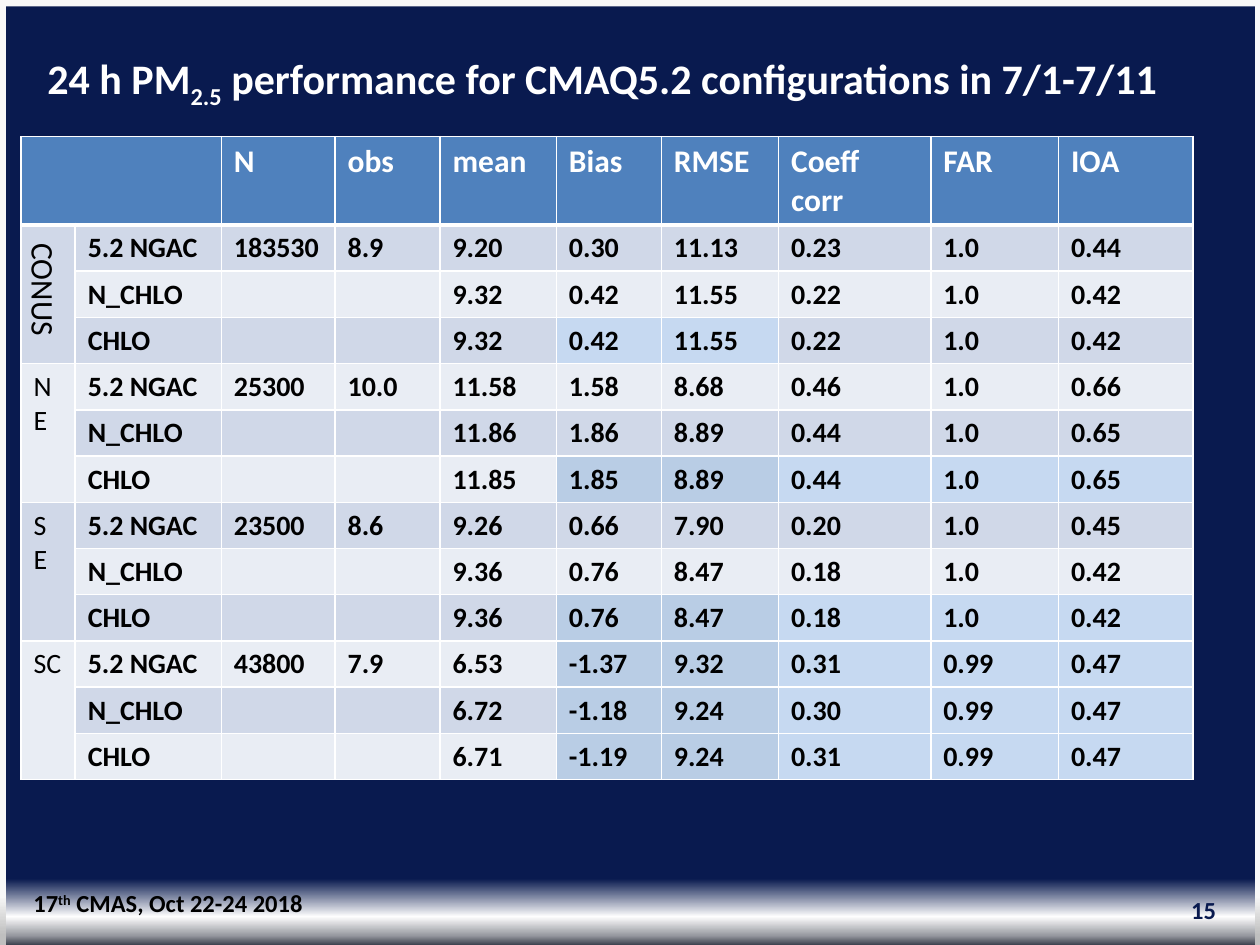
from dataclasses import dataclass
from lxml.etree import SubElement
from pptx import Presentation
from pptx.dml.color import RGBColor
from pptx.enum.shapes import MSO_SHAPE
from pptx.enum.text import MSO_ANCHOR, PP_ALIGN
from pptx.oxml.ns import qn
from pptx.util import Pt

TITLE = [("24 h PM", 0), ("2.5", -25),
         (" performance for CMAQ5.2 configurations in 7/1-7/11", 0)]
FOOTER = [("17", 0), ("th", 30), (" CMAS, Oct 22-24 2018", 0)]
PAGE = "15"
HEADERS = ["", "", "N", "obs", "mean", "Bias", "RMSE", "Coeff corr", "FAR", "IOA"]
CONFIGURATIONS = ["5.2 NGAC", "N_CHLO", "CHLO"]
# region label, N, obs, then one row of scores per configuration
REGIONS = [
    ("", "183530", "8.9", ["9.20 0.30 11.13 0.23 1.0 0.44",
                           "9.32 0.42 11.55 0.22 1.0 0.42",
                           "9.32 0.42 11.55 0.22 1.0 0.42"]),
    ("NE", "25300", "10.0", ["11.58 1.58 8.68 0.46 1.0 0.66",
                             "11.86 1.86 8.89 0.44 1.0 0.65",
                             "11.85 1.85 8.89 0.44 1.0 0.65"]),
    ("S\nE", "23500", "8.6", ["9.26 0.66 7.90 0.20 1.0 0.45",
                              "9.36 0.76 8.47 0.18 1.0 0.42",
                              "9.36 0.76 8.47 0.18 1.0 0.42"]),
    ("SC", "43800", "7.9", ["6.53 -1.37 9.32 0.31 0.99 0.47",
                            "6.72 -1.18 9.24 0.30 0.99 0.47",
                            "6.71 -1.19 9.24 0.31 0.99 0.47"]),
]
TALL_REGION = "CONUS"
COLUMN_WIDTHS = [31, 83.5, 65, 60, 66.5, 60, 67, 87, 73, 77]
HEADER_HEIGHT, ROW_HEIGHT = 50.5, 26.4
BIAS, COEFF = HEADERS.index("Bias"), HEADERS.index("Coeff corr")
FULLY_MARKED_ROWS = {6, 9, 10, 11, 12}
SHORT_MARKED_ROW = 3


@dataclass(frozen=True)
class Theme:
    font: str = "Calibri"
    navy: str = "091A4F"
    white: str = "FFFFFF"
    black: str = "000000"
    edge: str = "F8F8F8"
    header: str = "4F81BD"
    bands: tuple = ("E9EDF4", "D0D8E8")
    mark: str = "C6D9F1"
    strong_mark: str = "B9CDE5"
    page_stops: tuple = ((93, "091A4F"), (97, "FEFEFE"), (99, "9799A0"), (100, "3C414E"))
    edge_stops: tuple = ((0, "F8F8F8"), (95, "F5F5F5"), (99, "BFBFBF"))
    title_size: int = 24
    header_size: int = 18
    body_size: int = 16
    footer_size: int = 14


THEME = Theme()


def paint_gradient(fill, element, stops):
    """Fill from top to bottom with (percent, colour) stops."""
    fill.gradient()
    fill.gradient_angle = 270
    stop_list = next(element.iter(qn("a:gsLst")))
    for old in list(stop_list):
        stop_list.remove(old)
    for percent, colour in stops:
        stop = SubElement(stop_list, qn("a:gs"), pos=str(percent * 1000))
        SubElement(stop, qn("a:srgbClr"), val=colour)


def style(paragraph, size, colour, bold=True):
    font = paragraph.font
    font.name, font.size, font.bold = THEME.font, Pt(size), bold
    font.color.rgb = RGBColor.from_string(colour)


def add_edge(slide, left, top, width, height, stops=None):
    edge = slide.shapes.add_shape(MSO_SHAPE.RECTANGLE, Pt(left), Pt(top), Pt(width), Pt(height))
    edge.shadow.inherit = False
    edge.line.fill.background()
    if stops:
        paint_gradient(edge.fill, edge.element, stops)
    else:
        edge.fill.solid()
        edge.fill.fore_color.rgb = RGBColor.from_string(THEME.edge)


def add_text(slide, box, runs, size, colour, bold=True, wrap=False):
    """Write one line from (text, baseline percent) runs."""
    frame = slide.shapes.add_textbox(*map(Pt, box)).text_frame
    frame.word_wrap = wrap
    line = frame.paragraphs[0]
    style(line, size, colour, bold)
    for text, baseline in runs:
        run = line.add_run()
        run.text = text
        if baseline:
            run.font._element.set("baseline", str(baseline * 1000))
    return frame


def write_cell(cell, text, fill, size, colour, bold, bottom=1):
    cell.text = text
    for paragraph in cell.text_frame.paragraphs:
        style(paragraph, size, colour, bold)
        if not text:
            SubElement(paragraph._p, qn("a:endParaRPr"), sz=str(size * 100))
    properties = cell._tc.get_or_add_tcPr()
    for side in "LRTB":
        width = bottom if side == "B" else 1
        border = SubElement(properties, qn(f"a:ln{side}"), w=str(Pt(width)))
        SubElement(SubElement(border, qn("a:solidFill")), qn("a:srgbClr"), val=THEME.white)
    cell.fill.solid()
    cell.fill.fore_color.rgb = RGBColor.from_string(fill)


def body_fill(row, column):
    if row in FULLY_MARKED_ROWS and column >= BIAS:
        return THEME.strong_mark if column < COEFF else THEME.mark
    if row == SHORT_MARKED_ROW and BIAS <= column < COEFF:
        return THEME.mark
    return THEME.bands[row % 2]


def body_rows():
    for region, count, observed, scores in REGIONS:
        for i, (configuration, values) in enumerate(zip(CONFIGURATIONS, scores)):
            lead = [region, configuration, count, observed] if i == 0 else ["", configuration, "", ""]
            yield lead + values.split()


def add_scores(slide):
    rows = list(body_rows())
    table = slide.shapes.add_table(
        len(rows) + 1, len(HEADERS), Pt(12), Pt(78), Pt(sum(COLUMN_WIDTHS)),
        Pt(HEADER_HEIGHT + ROW_HEIGHT * len(rows))).table
    for column, width in zip(table.columns, COLUMN_WIDTHS):
        column.width = Pt(width)
    for row in table.rows:
        row.height = Pt(ROW_HEIGHT)
    table.rows[0].height = Pt(HEADER_HEIGHT)
    for c, text in enumerate(HEADERS):
        write_cell(table.cell(0, c), text, THEME.header, THEME.header_size, THEME.white, True, 3)
    for r, values in enumerate(rows, 1):
        for c, text in enumerate(values):
            write_cell(table.cell(r, c), text, body_fill(r, c), THEME.body_size,
                       THEME.black, c > 0)
    table.cell(0, 0).merge(table.cell(0, 1))
    span = len(CONFIGURATIONS)
    for first in range(1, len(rows), span):
        table.cell(first, 0).merge(table.cell(first + span - 1, 0))


def main():
    deck = Presentation()
    deck.slide_width, deck.slide_height = Pt(720), Pt(540)
    slide = deck.slides.add_slide(deck.slide_layouts[6])
    paint_gradient(slide.background.fill, slide.element, THEME.page_stops)
    add_edge(slide, 0, 0, 3.6, 540, THEME.edge_stops)
    add_edge(slide, 1.4, 0, 718.6, 3.6)
    add_edge(slide, 717, 0, 3.6, 540, THEME.edge_stops)

    page = add_text(slide, (534, 505.5, 168, 29), [(PAGE, 0)], THEME.footer_size,
                    THEME.navy, wrap=True)
    page.vertical_anchor = MSO_ANCHOR.MIDDLE
    page.paragraphs[0].alignment = PP_ALIGN.RIGHT
    add_text(slide, (12, 504, 169, 24.5), FOOTER, THEME.footer_size, THEME.black)
    add_scores(slide)
    tall_region = add_text(slide, (3.6, 132, 36, 60.5), [(TALL_REGION, 0)],
                           THEME.header_size, THEME.black, bold=False)
    tall_region._txBody.bodyPr.set("vert", "eaVert")
    add_text(slide, (20, 26.6, 657.5, 36), TITLE, THEME.title_size, THEME.white)
    deck.save("out.pptx")


if __name__ == "__main__":
    main()
